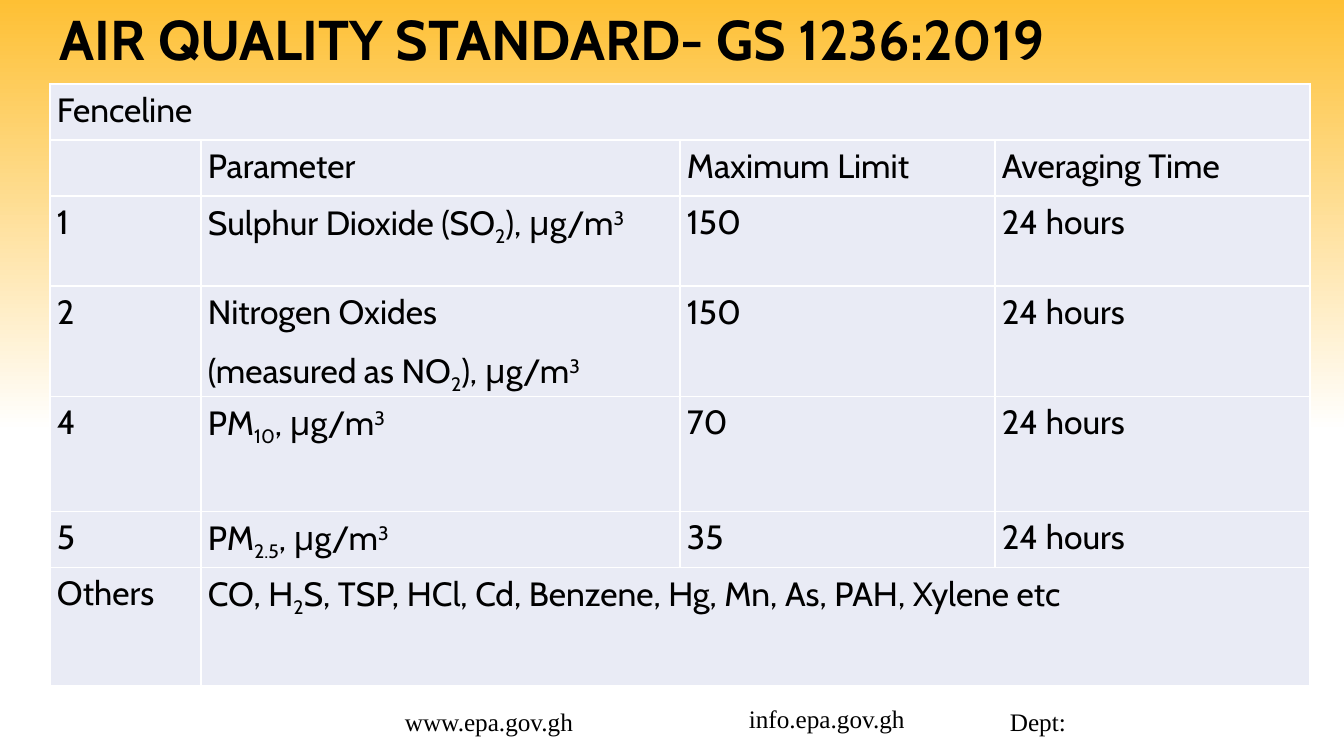
import pptx
import pptx.util
import pptx.dml.color
import pptx.enum.text
import pptx.oxml
import pptx.oxml.ns

PX = 914400 / 100.8
HUE = {"gold": "FEC034", "white": "FFFFFF", "cell": "E9EBF5", "ink": "000000"}
BASE = {"_": "-25000", "^": "30000"}


def px(n):
    return pptx.util.Emu(round(n * PX))


def write(frame, text, size, face, bold=False):
    for i, line in enumerate(text.split("\n")):
        para = frame.add_paragraph() if i else frame.paragraphs[0]
        for part in line.split("|"):
            run = para.add_run()
            run.text = part.lstrip("_^")
            run.font.size = pptx.util.Pt(size)
            run.font.name = face
            run.font.bold = bold
            run.font.color.rgb = pptx.dml.color.RGBColor.from_string(HUE["ink"])
            if part[0] in BASE:
                run.font._element.set("baseline", BASE[part[0]])


deck = pptx.Presentation()
deck.slide_width, deck.slide_height = px(1344), px(756)
slide = deck.slides.add_slide(deck.slide_layouts[6])

back = slide.background.fill
back.gradient()
back.gradient_angle = 270
for stop, name, place in zip(back.gradient_stops, ("gold", "white"), (0, 0.57)):
    stop.color.rgb = pptx.dml.color.RGBColor.from_string(HUE[name])
    stop.position = place

labels = [
    ("Dept:", 1000, 701, 252, 40, 18, "Times New Roman", False),
    ("www.epa.gov.gh", 395, 701, 219, 40, 18, "Times New Roman", False),
    ("info.epa.gov.gh", 739, 698, 202, 40, 18, "Times New Roman", False),
    ("AIR QUALITY STANDARD- GS 1236:2019", 50, 0, 1202, 84, 40, "Cabin", True),
]
for text, left, top, wide, high, size, face, bold in labels:
    box = slide.shapes.add_textbox(px(left), px(top), px(wide), px(high))
    frame = box.text_frame
    frame.word_wrap = True
    write(frame, text, size, face, bold)
    if bold:
        frame.vertical_anchor = pptx.enum.text.MSO_ANCHOR.MIDDLE
        frame.paragraphs[0].line_spacing = 0.9

rows = [
    ["Fenceline", "", "", ""],
    ["", "Parameter", "Maximum Limit", "Averaging Time"],
    ["1", "Sulphur Dioxide (SO|_2|), μg/m|^3", "150", "24 hours"],
    ["2", "Nitrogen Oxides\n(measured as NO|_2|), μg/m|^3", "150", "24 hours"],
    ["4", "PM|_10|, μg/m|^3", "70", "24 hours"],
    ["5", "PM|_2.5|, μg/m|^3", "35", "24 hours"],
    ["Others", "CO, H|_2|S, TSP, HCl, Cd, Benzene, Hg, Mn, As, PAH, Xylene etc", "", ""],
]
wides = [151, 479, 315, 315]
highs = [56, 56, 90, 106, 115, 56, 118]
grid = slide.shapes.add_table(
    len(rows), len(wides), px(50), px(84), px(sum(wides)), px(sum(highs))
).table
grid.first_row = grid.horz_banding = False
for col, wide in zip(grid.columns, wides):
    col.width = px(wide)
for row, high in zip(grid.rows, highs):
    row.height = px(high)
grid.cell(0, 0).merge(grid.cell(0, 3))
grid.cell(6, 1).merge(grid.cell(6, 3))

for r, row in enumerate(rows):
    for c, text in enumerate(row):
        cell = grid.cell(r, c)
        cell.margin_left = cell.margin_right = px(7)
        cell.margin_top = cell.margin_bottom = 0
        prop = cell._tc.get_or_add_tcPr()
        for side in "LRTB":
            prop.append(pptx.oxml.parse_xml(
                f'<a:ln{side} {pptx.oxml.ns.nsdecls("a")} w="12700"><a:solidFill>'
                f'<a:srgbClr val="{HUE["white"]}"/></a:solidFill></a:ln{side}>'))
        cell.fill.solid()
        cell.fill.fore_color.rgb = pptx.dml.color.RGBColor.from_string(HUE["cell"])
        if text:
            write(cell.text_frame, text, 24, "Cabin")
        for para in cell.text_frame.paragraphs:
            para.line_spacing = 1.15
            para.space_after = pptx.util.Pt(8)

deck.save("out.pptx")
